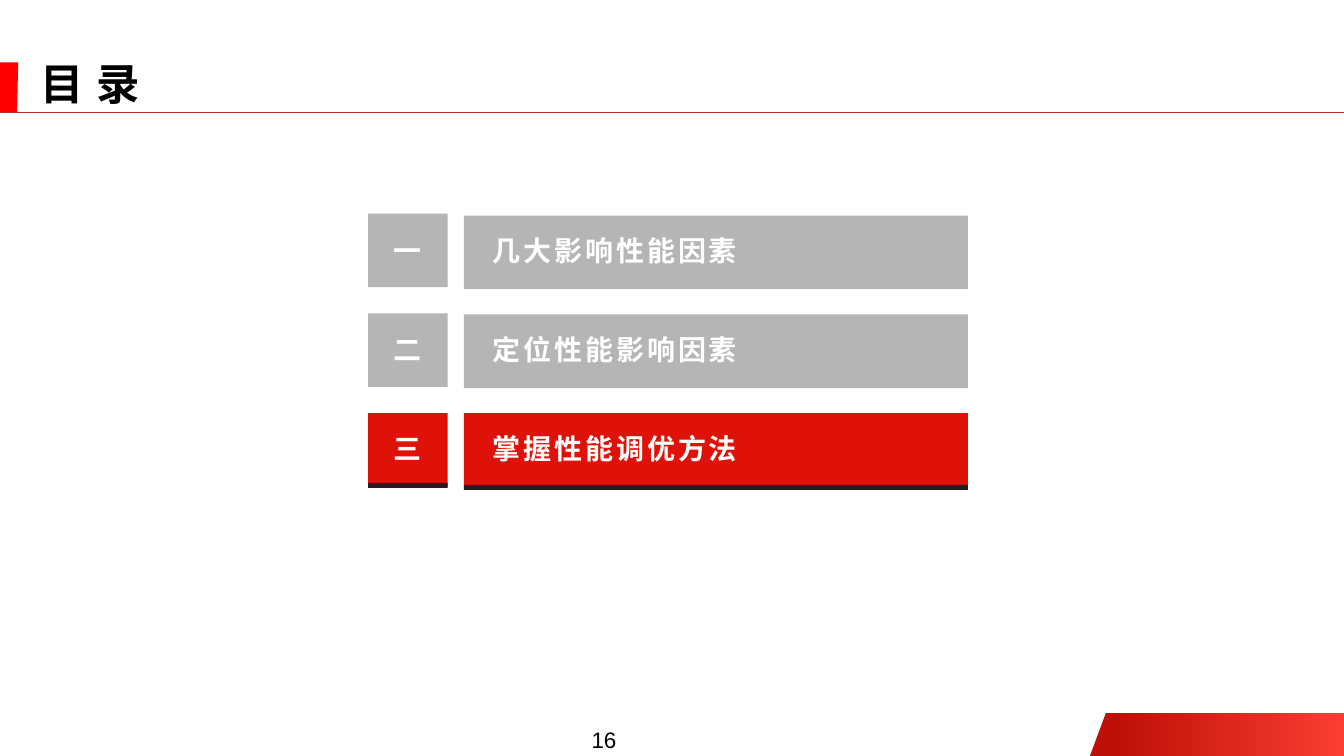
"""Build the contents slide with its third chapter highlighted."""
from lxml import etree
from pptx import Presentation
from pptx.dml.color import RGBColor
from pptx.enum.shapes import MSO_CONNECTOR, MSO_SHAPE
from pptx.enum.text import MSO_ANCHOR, PP_ALIGN
from pptx.oxml.ns import qn
from pptx.util import Inches, Pt

RECTANGLE, STRAIGHT = MSO_SHAPE.RECTANGLE, MSO_CONNECTOR.STRAIGHT
TOP, MIDDLE, BOTTOM = MSO_ANCHOR.TOP, MSO_ANCHOR.MIDDLE, MSO_ANCHOR.BOTTOM
LEFT, CENTER = PP_ALIGN.LEFT, PP_ALIGN.CENTER

WIDTH, HEIGHT = 13.33, 7.5
TITLE = "目 录"
PAGE_NUMBER = "16"
CHAPTERS = [
    ("一", "几大影响性能因素"),
    ("二", "定位性能影响因素"),
    ("三", "掌握性能调优方法"),
]
CURRENT_CHAPTER = 2
COLUMNS = [
    {"left": 3.65, "width": 0.79, "top": 2.12, "pitch": 0.99, "strip": 4.79,
     "text_left": 3.8, "text_width": 0.48, "spacing": 0, "wrap": False},
    {"left": 4.6, "width": 5, "top": 2.14, "pitch": 0.98, "strip": 4.81,
     "text_left": 4.79, "text_width": 4.63, "spacing": 2, "wrap": True},
]
TEXT_TOP, TEXT_PITCH, TEXT_HEIGHT = 2.27, 0.98, 0.44
BOX_HEIGHT, STRIP_HEIGHT = 0.73, 0.05
RULE_TOP = 1.11
TITLE_TAB = [(0, 0.62), (0.18, 0.62), (0.17, 1.12), (0, 1.12)]
FOOTER_BAND = [(10.81, HEIGHT), (10.97, 7.07), (WIDTH, 7.07), (WIDTH, HEIGHT)]
CJK_FONT, LATIN_FONT = "Noto Sans CJK SC", "Arial"
GREY, RED, DARK, WHITE, BLACK = "B5B5B5", "DE1208", "202022", "FFFFFF", "000000"
TAB_RED, RULE_RED = "FF0000", "B82E24"
BAND_STOPS = [(0.09, "BE1007"), (1, "F93D32")]


def rgb(value):
    """Turn a hex string into a colour."""
    return RGBColor.from_string(value)


def add_box(slide, left, top, width, height, color):
    """Add a plain filled rectangle."""
    shape = slide.shapes.add_shape(
        RECTANGLE, Inches(left), Inches(top), Inches(width), Inches(height))
    shape.shadow.inherit = False
    shape.fill.solid()
    shape.fill.fore_color.rgb = rgb(color)
    shape.line.fill.background()


def add_outline(slide, points):
    """Add a closed polygon without a line and return it."""
    corners = [(Inches(x), Inches(y)) for x, y in points]
    builder = slide.shapes.build_freeform(*corners[0])
    builder.add_line_segments(corners[1:], close=True)
    shape = builder.convert_to_shape()
    shape.shadow.inherit = False
    shape.line.fill.background()
    return shape


def add_text(slide, text, left, top, width, height, size, color, font=CJK_FONT,
             bold=True, spacing=0, wrap=True, anchor=TOP, align=LEFT):
    """Add a one-line text box and return its paragraph."""
    box = slide.shapes.add_textbox(
        Inches(left), Inches(top), Inches(width), Inches(height))
    frame = box.text_frame
    frame.word_wrap = wrap
    frame.vertical_anchor = anchor
    paragraph = frame.paragraphs[0]
    paragraph.alignment = align
    run = paragraph.add_run()
    run.text = text
    paragraph.font.size = Pt(size)
    paragraph.font.bold = bold
    paragraph.font.name = font
    paragraph.font.color.rgb = rgb(color)
    properties = run._r.get_or_add_rPr()
    properties.set("spc", str(spacing * 100))
    etree.SubElement(properties, qn("a:ea")).set("typeface", font)
    return paragraph


def add_frame(slide):
    """Add the title, its rule, the footer band and the page number."""
    band = add_outline(slide, FOOTER_BAND)
    band.fill.gradient()
    band.fill.gradient_angle = 0
    for stop, (position, color) in zip(band.fill.gradient_stops, BAND_STOPS):
        stop.position = position
        stop.color.rgb = rgb(color)
    tab = add_outline(slide, TITLE_TAB)
    tab.fill.solid()
    tab.fill.fore_color.rgb = rgb(TAB_RED)
    rule = slide.shapes.add_connector(
        STRAIGHT, 0, Inches(RULE_TOP), Inches(WIDTH), Inches(RULE_TOP))
    rule.line.color.rgb = rgb(RULE_RED)
    rule.line.width = Pt(0.5)
    etree.SubElement(rule._element.spPr, qn("a:effectLst"))
    add_text(slide, PAGE_NUMBER, 5.75, 7.15, 0.48, 0.37, 16, BLACK, LATIN_FONT,
             bold=False, wrap=False, anchor=BOTTOM, align=CENTER)
    title = add_text(slide, TITLE, 0.3, 0.59, 12.26, 0.53, 31, BLACK,
                     spacing=1, anchor=MIDDLE)
    title.line_spacing = 0.9


def add_chapter(slide, row, texts):
    """Add one row: the numeral and the chapter name on their boxes."""
    current = row == CURRENT_CHAPTER
    for column, text in zip(COLUMNS, texts):
        add_box(slide, column["left"], column["top"] + row * column["pitch"],
                column["width"], BOX_HEIGHT, RED if current else GREY)
        if current:
            add_box(slide, column["left"], column["strip"], column["width"],
                    STRIP_HEIGHT, DARK)
        add_text(slide, text, column["text_left"], TEXT_TOP + row * TEXT_PITCH,
                 column["text_width"], TEXT_HEIGHT, 20, WHITE,
                 spacing=column["spacing"], wrap=column["wrap"])


def main():
    """Create the presentation and save it."""
    presentation = Presentation()
    presentation.slide_width = Inches(WIDTH)
    presentation.slide_height = Inches(HEIGHT)
    slide = presentation.slides.add_slide(presentation.slide_layouts[6])
    add_frame(slide)
    for row, texts in enumerate(CHAPTERS):
        add_chapter(slide, row, texts)
    presentation.save("out.pptx")


if __name__ == "__main__":
    main()
